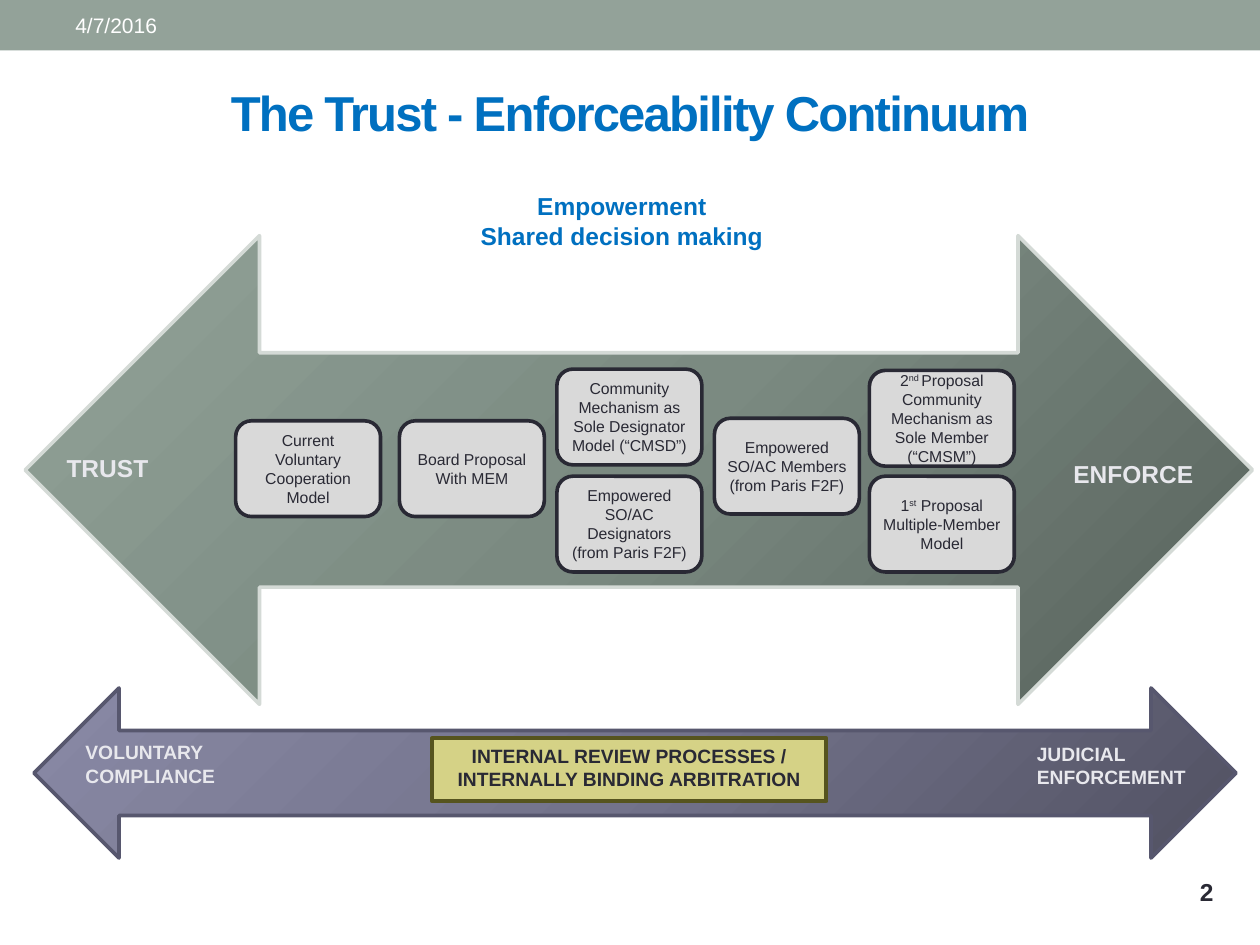
from pptx import Presentation
from pptx import util as u
from pptx.dml.color import RGBColor
from pptx.enum import shapes, text
from pptx.oxml import parse_xml
from pptx.oxml.ns import nsdecls

SAGE = RGBColor(0x93, 0xA2, 0x99)
PALE_SAGE = RGBColor(0xD4, 0xDA, 0xD6)
PURPLE = RGBColor(0x57, 0x57, 0x6E)
BLUE = RGBColor(0x00, 0x70, 0xC0)
INK = RGBColor(0x29, 0x29, 0x34)
GREY = RGBColor(0xD9, 0xD9, 0xD9)
LILAC = RGBColor(0xE8, 0xE8, 0xED)
YELLOW = RGBColor(0xD5, 0xD2, 0x86)
OLIVE = RGBColor(0x56, 0x54, 0x1E)
WHITE = RGBColor(0xFF, 0xFF, 0xFF)

KIND = shapes.MSO_SHAPE
LEFT, CENTER, RIGHT = text.PP_ALIGN.LEFT, text.PP_ALIGN.CENTER, text.PP_ALIGN.RIGHT
TOP, MIDDLE = text.MSO_ANCHOR.TOP, text.MSO_ANCHOR.MIDDLE

# place, line colour, gradient from the bottom right corner to the top left
ARROWS = [
    ((0.2, 1.87, 9.74, 3.72), PALE_SAGE, ("56615B", "7B8A81", "92A399")),
    ((0.27, 5.46, 9.54, 1.35), PURPLE, ("515162", "73738B", "8989A5")),
]

# place, words, size, colour, bold, alignment, anchor
LABELS = [
    ((0.5, 0.02, 3.17, 0.36), "4/7/2016", 12, WHITE, False, LEFT, MIDDLE),
    ((3.54, 1.47, 2.79, 0.88), "Empowerment\nShared decision making", 14, BLUE, True, CENTER, TOP),
    ((0.43, 3.55, 0.9, 0.36), "TRUST", 14, LILAC, True, LEFT, TOP),
    ((8.42, 3.59, 1.35, 0.36), "ENFORCE", 14, LILAC, True, LEFT, TOP),
    ((0.58, 5.83, 1.47, 0.5), "VOLUNTARY COMPLIANCE", 11, LILAC, True, LEFT, TOP),
    ((8.13, 5.84, 1.55, 0.5), "JUDICIAL ENFORCEMENT", 11, LILAC, True, LEFT, TOP),
    ((8.56, 6.9, 1.17, 0.36), "2", 14, INK, True, RIGHT, MIDDLE),
]

# left, top, paragraphs; words between ^ marks are superscript
CARD_WIDTH, CARD_HEIGHT = 1.15, 0.76
CARDS = [
    (1.87, 3.34, ["Current", "Voluntary", "Cooperation", "Model"]),
    (3.17, 3.34, ["Board Proposal", "With MEM"]),
    (4.42, 2.93, ["Community Mechanism as Sole Designator Model (“CMSD”)"]),
    (4.42, 3.78, ["Empowered SO/AC Designators", "(from Paris F2F)"]),
    (5.67, 3.32, ["Empowered SO/AC Members", "(from Paris F2F)"]),
    (6.9, 2.94, ["2^nd ^Proposal", "Community Mechanism as", "Sole Member (“CMSM”)"]),
    (6.9, 3.78, ["1^st^ Proposal", "Multiple-Member", "Model"]),
]


def write(box, paragraphs, size, color, bold=False, align=CENTER, anchor=MIDDLE):
    frame = box.text_frame
    frame.word_wrap = True
    frame.vertical_anchor = anchor
    for index, words in enumerate(paragraphs):
        para = frame.add_paragraph() if index else frame.paragraphs[0]
        para.alignment = align
        font = para.font
        font.name, font.size, font.bold = "Arial", u.Pt(size), bold
        font.color.rgb = color
        if "^" not in words:
            para.text = words
            continue
        for part, piece in enumerate(words.split("^")):
            span = para.add_run()
            span.text = piece
            if part % 2:
                span.font._element.set("baseline", "30000")
    return frame


def add_label(page, place, words, *style):
    box = page.shapes.add_textbox(*map(u.Inches, place))
    return write(box, [words], *style)


def add_block(page, kind, place, fill=None, line=None, weight=2.08):
    block = page.shapes.add_shape(kind, *map(u.Inches, place))
    block.shadow.inherit = False
    if fill is not None:
        block.fill.solid()
        block.fill.fore_color.rgb = fill
    if line is None:
        block.line.fill.background()
    else:
        block.line.color.rgb = line
        block.line.width = u.Pt(weight)
    return block


def add_arrow(page, place, line, colors):
    arrow = add_block(page, KIND.LEFT_RIGHT_ARROW, place, line=line)
    stops = "".join(
        f'<a:gs pos="{index * 50000}"><a:srgbClr val="{color}"/></a:gs>'
        for index, color in enumerate(colors))
    gradient = parse_xml(
        f'<a:gradFill {nsdecls("a")} rotWithShape="1"><a:gsLst>{stops}</a:gsLst>'
        '<a:path path="circle"><a:fillToRect l="100000" t="100000"/></a:path></a:gradFill>')
    arrow._element.spPr.find("{*}prstGeom").addnext(gradient)


def main():
    deck = Presentation()
    deck.slide_width, deck.slide_height = u.Inches(10), u.Inches(7.5)
    page = deck.slides.add_slide(deck.slide_layouts[6])

    add_block(page, KIND.RECTANGLE, (0, 0, 10, 0.4), SAGE)
    title = add_label(page, (0.5, 0.46, 9, 0.86), "The Trust - Enforceability Continuum",
                      28, BLUE, True)
    title.paragraphs[0].runs[0].font._element.set("spc", "-100")

    for arrow in ARROWS:
        add_arrow(page, *arrow)
    for label in LABELS:
        add_label(page, *label)

    review = add_block(page, KIND.RECTANGLE, (3.43, 5.86, 3.13, 0.5), YELLOW, OLIVE, 2.25)
    write(review, ["INTERNAL REVIEW PROCESSES / INTERNALLY BINDING ARBITRATION"],
          11, INK, True, CENTER, TOP)

    for left, top, paragraphs in CARDS:
        card = add_block(page, KIND.ROUNDED_RECTANGLE, (left, top, CARD_WIDTH, CARD_HEIGHT),
                         GREY, INK)
        frame = write(card, paragraphs, 9, INK)
        frame.margin_left = frame.margin_right = u.Inches(0.05)
        frame.margin_top = frame.margin_bottom = u.Inches(0.05)

    deck.save("out.pptx")


if __name__ == "__main__":
    main()
